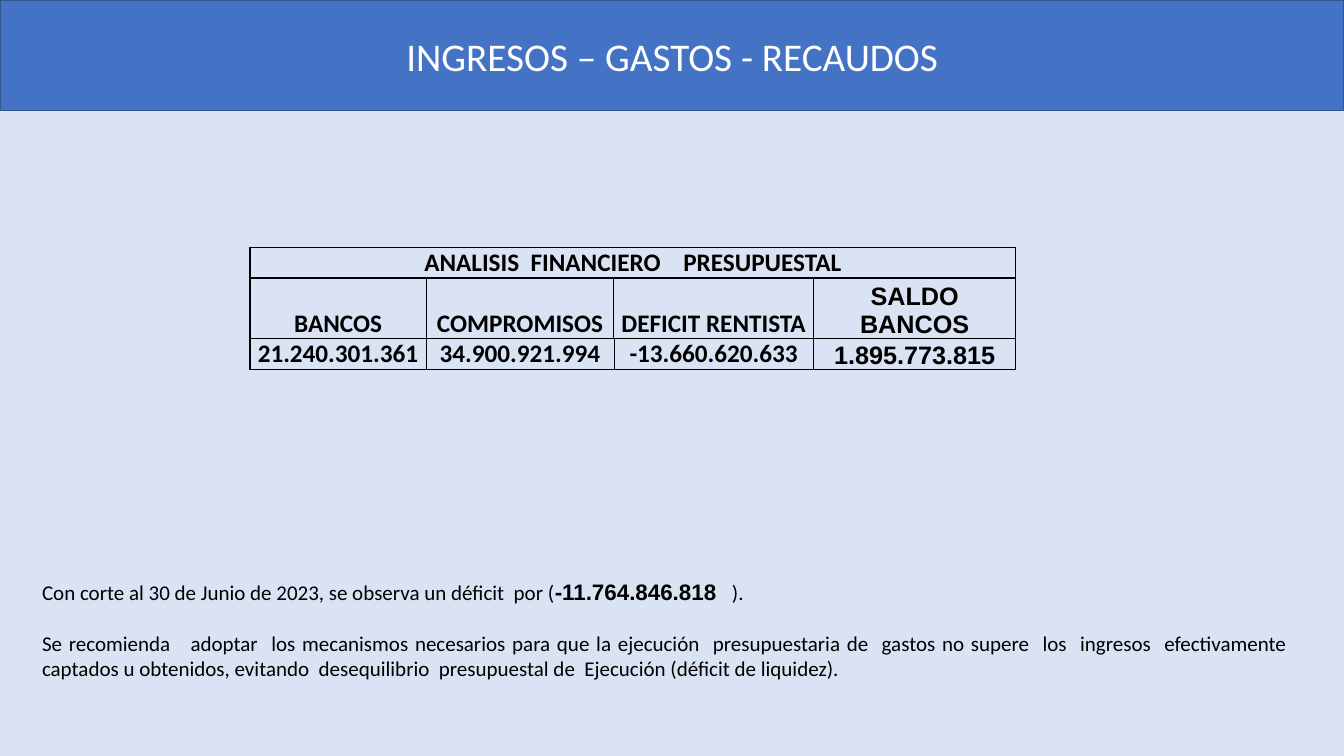
import pptx
import pptx.dml.color
import pptx.enum.text
import pptx.oxml
import pptx.oxml.ns
import pptx.util
from lxml import etree

Cm = pptx.util.Cm
Pt = pptx.util.Pt
RGBColor = pptx.dml.color.RGBColor
PP_ALIGN = pptx.enum.text.PP_ALIGN
MSO_ANCHOR = pptx.enum.text.MSO_ANCHOR

PALE_BLUE = RGBColor(0xDA, 0xE3, 0xF3)
BLUE = RGBColor(0x44, 0x72, 0xC4)
DARK_BLUE = RGBColor(0x32, 0x54, 0x91)
WHITE = RGBColor(0xFF, 0xFF, 0xFF)
BLACK = RGBColor(0x00, 0x00, 0x00)


def add_span(para, text, size, font="Calibri", bold=False, color=BLACK):
    span = para.add_run()
    span.text = text
    span.font.size = Pt(size)
    span.font.name = font
    span.font.bold = bold
    span.font.color.rgb = color


def add_border(cell, side, width):
    properties = cell._tc.get_or_add_tcPr()
    line = etree.SubElement(properties, pptx.oxml.ns.qn("a:ln" + side), w=str(Pt(width)))
    fill = etree.SubElement(line, pptx.oxml.ns.qn("a:solidFill"))
    etree.SubElement(fill, pptx.oxml.ns.qn("a:srgbClr"), val=str(BLACK))


deck = pptx.Presentation()
deck.slide_width = Cm(33.87)
deck.slide_height = Cm(19.05)
page = deck.slides.add_slide(deck.slide_layouts[5])
page.background.fill.solid()
page.background.fill.fore_color.rgb = PALE_BLUE

# Title band
title = page.shapes.title
title.left, title.top = Cm(0), Cm(0)
title.width, title.height = deck.slide_width, Cm(2.79)
title.fill.solid()
title.fill.fore_color.rgb = BLUE
title.line.color.rgb = DARK_BLUE
title.line.width = Pt(1)
title.text_frame.vertical_anchor = MSO_ANCHOR.MIDDLE
title.text_frame.auto_size = pptx.enum.text.MSO_AUTO_SIZE.NONE
title_para = title.text_frame.paragraphs[0]
title_para.alignment = PP_ALIGN.CENTER
add_span(title_para, "INGRESOS – GASTOS - RECAUDOS", 28, color=WHITE)

# Budget table
rows = [
    ["ANALISIS  FINANCIERO    PRESUPUESTAL", "", "", ""],
    ["BANCOS", "COMPROMISOS", "DEFICIT RENTISTA", "SALDO BANCOS"],
    ["21.240.301.361", "34.900.921.994", "-13.660.620.633", "1.895.773.815"],
]
column_widths = [4.44, 4.73, 5.03, 5.1]
row_heights = [0.77, 1.53, 0.77]
frame = page.shapes.add_table(
    len(rows), len(column_widths), Cm(6.3), Cm(6.23), Cm(sum(column_widths)), Cm(sum(row_heights))
)
table = frame.table
table.first_row = False
table.horz_banding = False
for column, width in zip(table.columns, column_widths):
    column.width = Cm(width)
for row, height in zip(table.rows, row_heights):
    row.height = Cm(height)
table.cell(0, 0).merge(table.cell(0, 3))

last_row, last_column = len(rows) - 1, len(column_widths) - 1
for r, texts in enumerate(rows):
    for c, text in enumerate(texts):
        cell = table.cell(r, c)
        cell.margin_left = cell.margin_right = cell.margin_top = cell.margin_bottom = 0
        cell.vertical_anchor = MSO_ANCHOR.BOTTOM
        # Inner verticals of the figures row are thinner
        add_border(cell, "L", 0.5 if r == last_row and c > 0 else 1)
        add_border(cell, "R", 0.5 if r == last_row and c < last_column else 1)
        add_border(cell, "T", 1)
        add_border(cell, "B", 1)
        cell.fill.background()
        if text:
            para = cell.text_frame.paragraphs[0]
            para.alignment = PP_ALIGN.CENTER
            add_span(para, text, 18, "Arial" if c == last_column else "Calibri", bold=True)

# Closing remarks
box = page.shapes.add_textbox(Cm(0.81), Cm(14.45), Cm(32.23), Cm(2.87))
box.text_frame.word_wrap = True
deficit = box.text_frame.paragraphs[0]
add_span(deficit, "Con corte al 30 de Junio de 2023, se observa un déficit  por (", 15)
add_span(deficit, "-11.764.846.818 ", 16, "Arial", bold=True)
add_span(deficit, "  ).", 15)
advice = box.text_frame.add_paragraph()
advice.space_before = Pt(18)
add_span(
    advice,
    "Se recomienda   adoptar  los mecanismos necesarios para que la ejecución  "
    "presupuestaria de  gastos no supere  los  ingresos  efectivamente   captados u "
    "obtenidos, evitando  desequilibrio  presupuestal de  Ejecución (déficit de liquidez).",
    15,
)
for para in box.text_frame.paragraphs:
    para.alignment = PP_ALIGN.JUSTIFY

deck.save("out.pptx")
